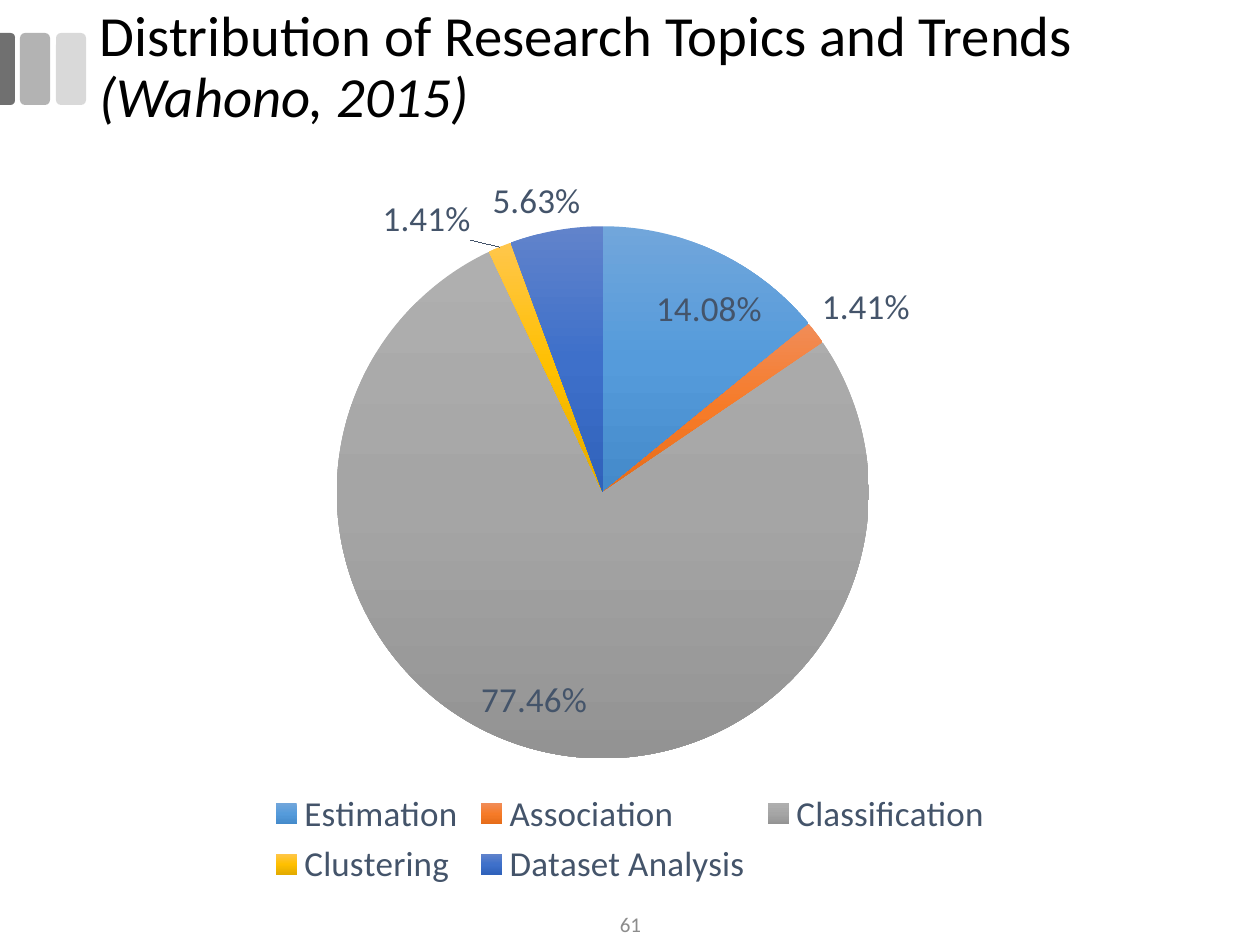
from lxml import etree
from pptx import Presentation
from pptx import util as u
from pptx.chart.data import CategoryChartData
from pptx.dml.color import RGBColor
from pptx.enum import chart as ch, shapes, text
from pptx.oxml import parse_xml
from pptx.oxml.ns import nsdecls, qn

FONT = "Calibri"
LABEL_COLOUR = "44546A"
TOPICS = [
    ("Estimation", 0.1408, ("71A6DB", "559BDB", "448ACA")),
    ("Association", 0.0141, ("F18C57", "F67B28", "E56C19")),
    ("Classification", 0.7746, ("AFAFAF", "A5A5A5", "939393")),
    ("Clustering", 0.0141, ("FFC64B", "FFC000", "E3AB00")),
    ("Dataset Analysis", 0.0563, ("6183CB", "3E70CA", "3062BB")),
]


def px(n):
    return u.Emu(round(n * 914400 / 126))


def rgb(colour):
    return RGBColor.from_string(colour)


def style_font(font, size, colour, italic=None):
    font.name = FONT
    font.size = u.Pt(size)
    font.color.rgb = rgb(colour)
    font.italic = italic


def add_text(paragraph, words, size=20, colour="000000", italic=None):
    run = paragraph.add_run()
    run.text = words
    style_font(run.font, size, colour, italic)


def add_bar(slide, kind, box, colour):
    bar = slide.shapes.add_shape(kind, *map(px, box))
    bar.shadow.inherit = False
    bar.fill.solid()
    bar.fill.fore_color.rgb = rgb(colour)
    bar.line.fill.background()
    return bar


def add_header_bars(slide, left, top, width, height):
    """Two rounded bars, and one cut off by the slide's left edge."""
    bar_width, pitch, edge_width = 30, 36, 15
    for step, colour in ((2, "D9D9D9"), (1, "B3B3B3")):
        bar_left = left + width - bar_width - (2 - step) * pitch
        add_bar(slide, shapes.MSO_SHAPE.ROUNDED_RECTANGLE,
                (bar_left, top, bar_width, height), colour)
    edge_box = (left + (edge_width - height) / 2, top + (height - edge_width) / 2,
                height, edge_width)
    edge = add_bar(slide, shapes.MSO_SHAPE.ROUND_2_SAME_RECTANGLE, edge_box, "707070")
    edge.adjustments[0] = 0.29
    edge.rotation = 90


def add_title(slide, left, top, width, height):
    title = slide.shapes.title
    title.left, title.top, title.width, title.height = map(px, (left, top, width, height))
    frame = title.text_frame
    frame.word_wrap = True
    frame.auto_size = text.MSO_AUTO_SIZE.NONE
    frame.vertical_anchor = text.MSO_ANCHOR.MIDDLE
    heading = frame.paragraphs[0]
    heading.alignment = text.PP_ALIGN.LEFT
    heading.line_spacing = 0.9
    add_text(heading, "Distribution of Research Topics and Trends ", size=32.4)
    add_text(heading, "(Wahono, 2015)", size=32.4, italic=True)


def fill_gradient(fmt, colours):
    """Fill top to bottom with three evenly spaced colours."""
    stops = "".join(
        f'<a:gs pos="{i * 50000}"><a:srgbClr val="{colour}"/></a:gs>'
        for i, colour in enumerate(colours))
    fmt.fill.background()
    properties = fmt.fill._xPr
    properties.replace(properties.find(qn("a:noFill")), parse_xml(
        f'<a:gradFill {nsdecls("a")} rotWithShape="1"><a:gsLst>{stops}</a:gsLst>'
        '<a:lin ang="5400000" scaled="0"/></a:gradFill>'))


def place_plot(chart, **fractions):
    plot_area = chart._chartSpace.find(".//" + qn("c:plotArea"))
    for old in plot_area.findall(qn("c:layout")):
        plot_area.remove(old)
    layout = etree.Element(qn("c:layout"))
    manual = etree.SubElement(layout, qn("c:manualLayout"))
    settings = {"layoutTarget": "inner", "xMode": "edge", "yMode": "edge", **fractions}
    for tag, value in settings.items():
        etree.SubElement(manual, qn(f"c:{tag}")).set("val", str(value))
    plot_area.insert(0, layout)


def add_topic_pie(slide, left, top, width, height):
    names, shares, gradients = zip(*TOPICS)
    data = CategoryChartData(number_format="0.00%")
    data.categories = names
    data.add_series("Series 1", shares)
    chart = slide.shapes.add_chart(
        ch.XL_CHART_TYPE.PIE, *map(px, (left, top, width, height)), data).chart
    style_font(chart.font, 20, "000000")
    chart.has_title = False
    chart.has_legend = True
    chart.legend.position = ch.XL_LEGEND_POSITION.BOTTOM
    chart.legend.include_in_layout = False
    style_font(chart.legend.font, 20, LABEL_COLOUR)

    topics = chart.plots[0].series[0]
    for i, colours in enumerate(gradients):
        wedge = topics.points[i].format
        fill_gradient(wedge, colours)
        wedge.line.fill.background()
    labels = topics.data_labels
    labels.show_value = True
    labels.number_format = "0.00%"
    labels.number_format_is_linked = False
    labels.position = ch.XL_LABEL_POSITION.BEST_FIT
    style_font(labels.font, 20, LABEL_COLOUR)
    place_plot(chart, x=0.23, y=0.09, w=0.49, h=0.73)


def add_page_number(slide, left, top, width, height):
    frame = slide.shapes.add_textbox(*map(px, (left, top, width, height))).text_frame
    frame.word_wrap = True
    frame.vertical_anchor = text.MSO_ANCHOR.MIDDLE
    number = frame.paragraphs[0]
    number.alignment = text.PP_ALIGN.CENTER
    add_text(number, "61", size=12, colour="8C8C8C")


def main():
    deck = Presentation()
    deck.slide_width, deck.slide_height = px(1260), px(945)
    slide = deck.slides.add_slide(deck.slide_layouts[5])
    add_header_bars(slide, 0, 33, 86, 72)
    add_topic_pie(slide, 87, 158, 1086, 735)
    add_title(slide, 87, 21, 1153, 95)
    add_page_number(slide, 489, 903, 283, 42)
    deck.save("out.pptx")


if __name__ == "__main__":
    main()
